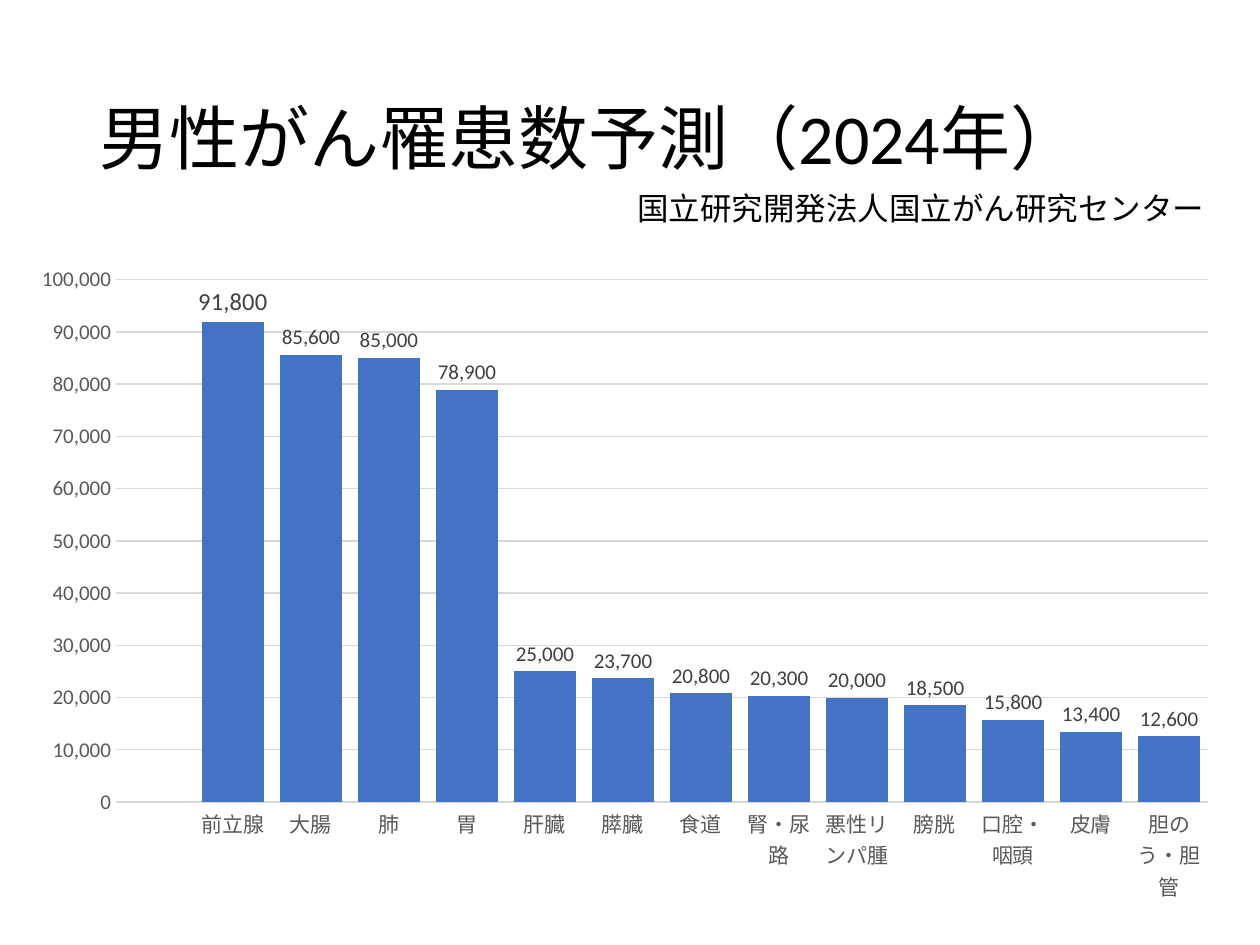
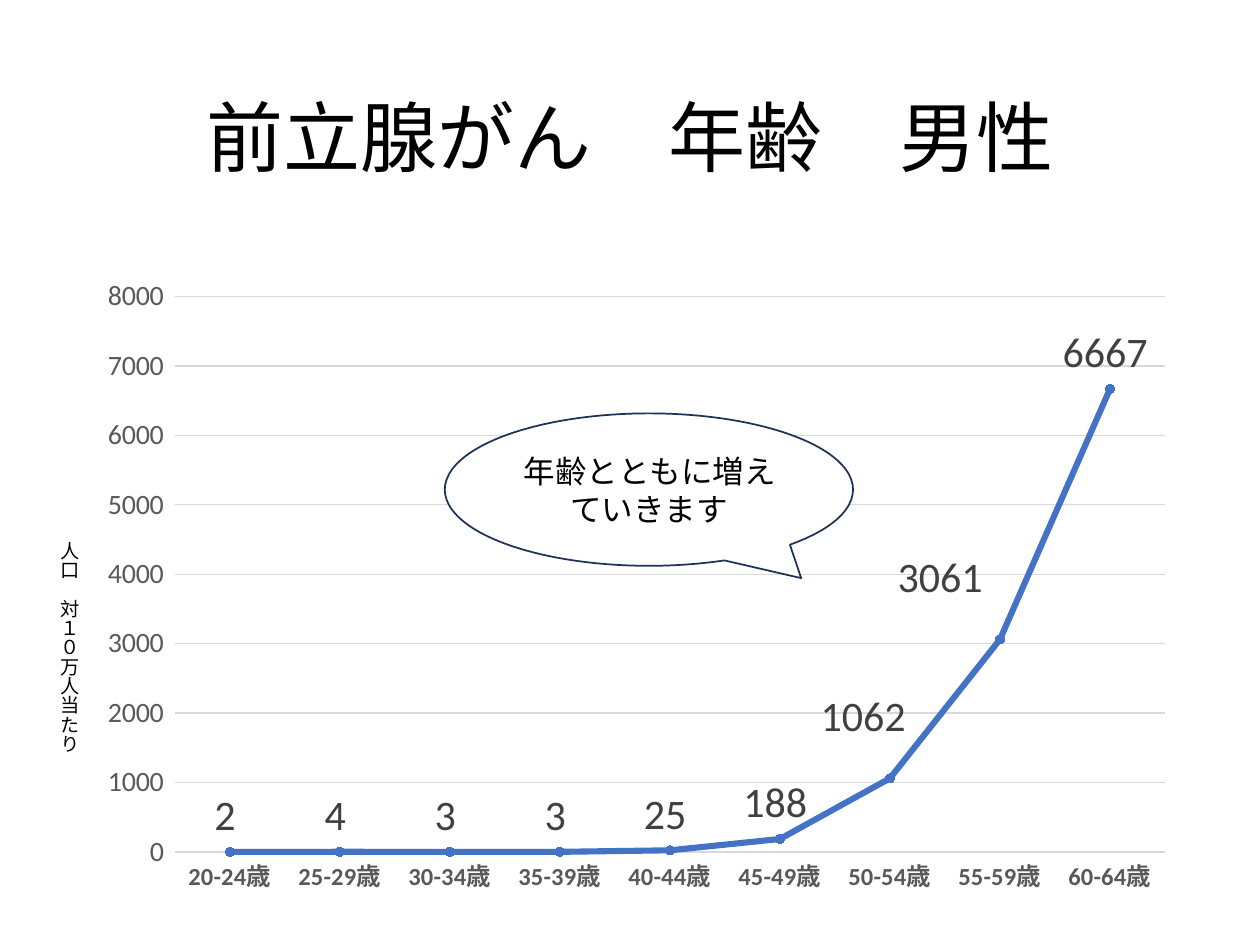
"""Build two slides on cancer numbers in men: a column chart and a line chart."""
import pptx
import pptx.chart.data
import pptx.dml.color
import pptx.enum.chart
import pptx.enum.shapes
import pptx.enum.text
import pptx.oxml
import pptx.oxml.ns
import pptx.util

Pt = pptx.util.Pt
RGB = pptx.dml.color.RGBColor
KIND = pptx.enum.chart.XL_CHART_TYPE
SPOT = pptx.enum.chart.XL_LABEL_POSITION
TICK = pptx.enum.chart.XL_TICK_MARK
ALIGN = pptx.enum.text.PP_ALIGN
MID = pptx.enum.text.MSO_ANCHOR.MIDDLE
GROW = pptx.enum.text.MSO_AUTO_SIZE.SHAPE_TO_FIT_TEXT

BLACK = RGB(0, 0, 0)
WHITE = RGB(255, 255, 255)
BLUE = RGB(0x44, 0x72, 0xC4)
NAVY = RGB(0x1E, 0x32, 0x56)
GREY = RGB(0x59, 0x59, 0x59)
DARK = RGB(0x40, 0x40, 0x40)
PALE = RGB(0xD9, 0xD9, 0xD9)
FACE = "Calibri"

TITLE = (49.7, 28.8, 620.6, 104.4)

CASES = {
    "kind": KIND.COLUMN_CLUSTERED,
    "box": (10.8, 144.7, 693.4, 378),
    "plot": (0.08, 0.04, 0.9, 0.79),
    "code": "#,##0",
    "data": [("", None), ("前立腺", 91800), ("大腸", 85600), ("肺", 85000), ("胃", 78900),
             ("肝臓", 25000), ("膵臓", 23700), ("食道", 20800), ("腎・尿路", 20300),
             ("悪性リンパ腫", 20000), ("膀胱", 18500), ("口腔・咽頭", 15800),
             ("皮膚", 13400), ("胆のう・胆管", 12600)],
    "top": 100000, "step": 10000,
    "cat": {"size": Pt(12), "bold": False}, "val": {"size": Pt(12)},
    "label": {"size": Pt(12)}, "spot": SPOT.OUTSIDE_END,
    "points": {1: (Pt(14), None)},
}
AGES = {
    "kind": KIND.LINE_MARKERS,
    "box": (49.7, 151.2, 628.6, 365),
    "plot": (0.08, 0.05, 0.9, 0.87),
    "code": r"0_);[Red]\(0\)",
    "data": [(f"{age}-{age + 4}歳", count) for age, count in
             zip(range(20, 65, 5), (2, 4, 3, 3, 25, 188, 1062, 3061, 6667))],
    "top": 8000, "step": 1000,
    "cat": {"size": Pt(14), "bold": True}, "val": {"size": Pt(16)},
    "label": {"size": Pt(24)}, "spot": SPOT.ABOVE,
    "points": {6: (Pt(24), (-0.02, -0.04)), 7: (Pt(24), (-0.05, -0.04))},
}


def assign(item, **values):
    """Set each named value on the item."""
    for name, value in values.items():
        setattr(item, name, value)


def style(font, color, **values):
    """Give a font the shared face, a colour and more."""
    assign(font, name=FACE, **values)
    font.color.rgb = color


def stroke(line, color, width):
    """Draw a line in one colour and width."""
    line.color.rgb = color
    line.width = Pt(width)


def write(shape, text, size, align=None, space=None, **frame):
    """Write one paragraph into a shape."""
    assign(shape.text_frame, **frame)
    para = shape.text_frame.paragraphs[0]
    assign(para, alignment=align, line_spacing=space)
    run = para.add_run()
    run.text = text
    style(run.font, BLACK, size=Pt(size))


def textbox(slide, box, *args, **values):
    """Add a text box and return it."""
    shape = slide.shapes.add_textbox(*map(Pt, box))
    write(shape, *args, **values)
    return shape


def begin(deck, title, size, align=None):
    """Add a blank slide with its title."""
    slide = deck.slides.add_slide(deck.slide_layouts[6])
    textbox(slide, TITLE, title, size, align, 0.9, word_wrap=True, vertical_anchor=MID)
    return slide


def layout(tags):
    """Make a manual chart layout from tag and value pairs."""
    parts = "".join(f'<c:{tag} val="{value}"/>' for tag, value in tags)
    return pptx.oxml.parse_xml(
        f'<c:layout {pptx.oxml.ns.nsdecls("c")}><c:manualLayout>{parts}'
        '</c:manualLayout></c:layout>')


def graph(slide, info):
    """Add a chart with the shared axes and labels."""
    names, counts = zip(*info["data"])
    data = pptx.chart.data.CategoryChartData(number_format=info["code"])
    data.categories = names
    data.add_series("Series 1", counts)
    chart = slide.shapes.add_chart(info["kind"], *map(Pt, info["box"]), data).chart
    assign(chart, has_legend=False, has_title=False)
    style(chart.font, BLACK, size=Pt(10))

    for axis, font in ((chart.category_axis, info["cat"]), (chart.value_axis, info["val"])):
        assign(axis, major_tick_mark=TICK.NONE, minor_tick_mark=TICK.NONE)
        style(axis.tick_labels.font, GREY, **font)
    chart.category_axis.has_major_gridlines = False
    stroke(chart.category_axis.format.line, PALE, 0.75)
    for body in chart.element.xpath(".//c:catAx/c:txPr/a:bodyPr"):
        body.set("rot", "0")
        body.set("vert", "horz")
    axis = chart.value_axis
    assign(axis, minimum_scale=0, maximum_scale=info["top"], major_unit=info["step"],
           has_major_gridlines=True)
    axis.format.line.fill.background()
    stroke(axis.major_gridlines.format.line, PALE, 0.75)
    assign(axis.tick_labels, number_format=info["code"], number_format_is_linked=False)

    chart.plots[0].vary_by_categories = False
    series = chart.plots[0].series[0]
    labels = series.data_labels
    assign(labels, show_value=True, position=info["spot"],
           number_format=info["code"], number_format_is_linked=False)
    style(labels.font, DARK, **info["label"])
    for index, (size, shift) in info["points"].items():
        label = series.points[index].data_label
        style(label.font, DARK, size=size)
        label.position = info["spot"]
        if shift:
            mark = chart.element.xpath(f'.//c:dLbl/c:idx[@val="{index}"]')[0]
            mark.addnext(layout(zip("xy", shift)))
    for leader in chart.element.xpath(".//c:showLeaderLines"):
        leader.set("val", "0")

    area = chart.element.xpath(".//c:plotArea")[0]
    for old in area.xpath("./c:layout"):
        area.remove(old)
    modes = [("layoutTarget", "inner"), ("xMode", "edge"), ("yMode", "edge")]
    area.insert(0, layout(modes + list(zip("xywh", info["plot"]))))
    return chart.plots[0], series


def cases(deck):
    """Build the slide of cases by site."""
    slide = begin(deck, "男性がん罹患数予測（2024年）", 40)
    plot, series = graph(slide, CASES)
    assign(plot, gap_width=26, overlap=2)
    series.format.fill.solid()
    series.format.fill.fore_color.rgb = BLUE
    textbox(slide, (357.1, 104.4, 360, 28.8), "国立研究開発法人国立がん研究センター", 18,
            word_wrap=True, auto_size=GROW)


def ages(deck):
    """Build the slide of cases by age."""
    slide = begin(deck, "前立腺がん　年齢　男性", 44, ALIGN.CENTER)
    series = graph(slide, AGES)[1]
    series.smooth = False
    stroke(series.format.line, BLUE, 3.5)
    assign(series.marker, style=pptx.enum.chart.XL_MARKER_STYLE.CIRCLE, size=5)
    series.marker.format.fill.solid()
    series.marker.format.fill.fore_color.rgb = BLUE
    stroke(series.marker.format.line, BLUE, 0.75)

    unit = textbox(slide, (21.6, 302.4, 28.1, 129.6), "人口　対１０万人当たり", 11,
                   word_wrap=False, auto_size=GROW)
    unit.element.txBody.bodyPr.set("vert", "eaVert")

    bubble = slide.shapes.add_shape(
        pptx.enum.shapes.MSO_SHAPE.OVAL_CALLOUT, *map(Pt, (254.2, 236.2, 233.3, 87.1)))
    bubble.shadow.inherit = False
    bubble.adjustments[0] = 0.373
    bubble.adjustments[1] = 0.581
    bubble.fill.solid()
    bubble.fill.fore_color.rgb = WHITE
    stroke(bubble.line, NAVY, 1)
    write(bubble, "年齢とともに増えていきます", 18, ALIGN.CENTER,
          word_wrap=True, vertical_anchor=MID)


def main():
    """Build and save the deck."""
    deck = pptx.Presentation()
    assign(deck, slide_width=Pt(720), slide_height=Pt(540))
    cases(deck)
    ages(deck)
    deck.save("out.pptx")


if __name__ == "__main__":
    main()
